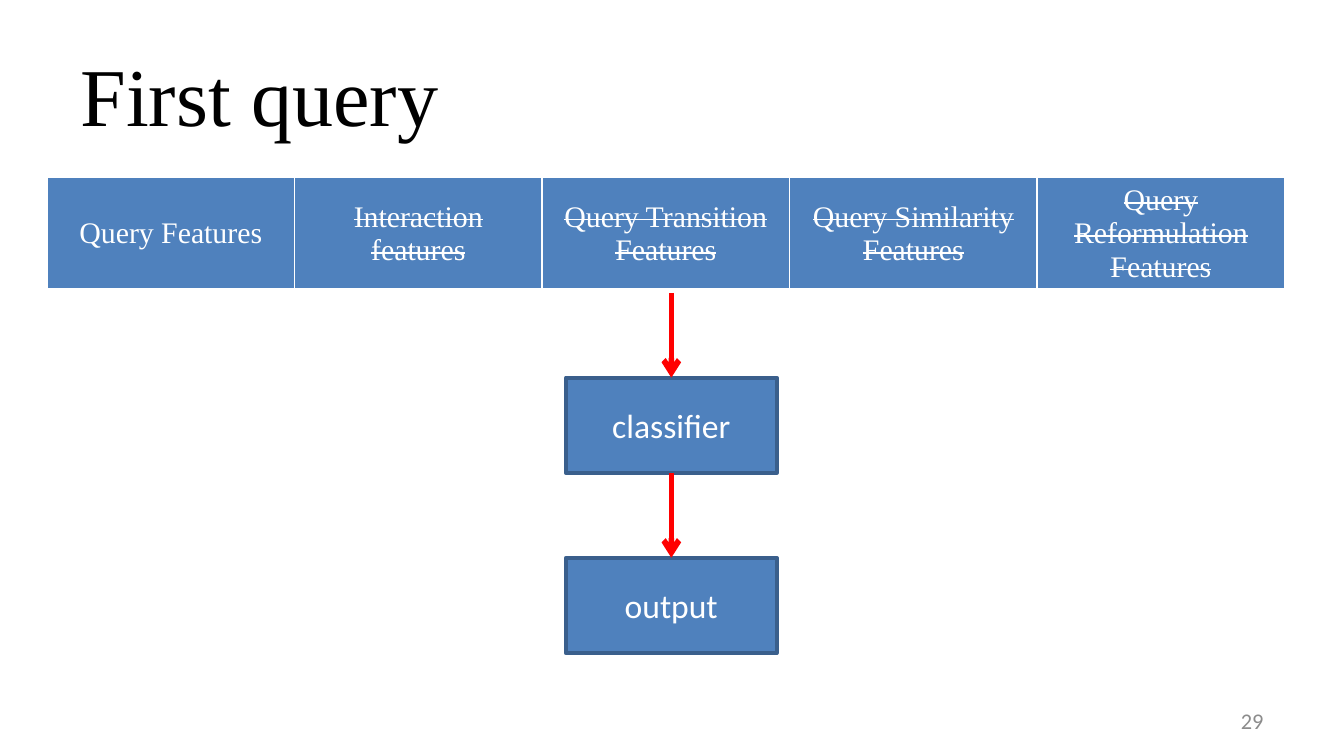
import pptx
import pptx.dml.color
import pptx.enum.shapes
import pptx.enum.text
import pptx.oxml
import pptx.oxml.ns
import pptx.util
from lxml import etree

Inches, Pt = pptx.util.Inches, pptx.util.Pt
PP_ALIGN = pptx.enum.text.PP_ALIGN
MIDDLE = pptx.enum.text.MSO_ANCHOR.MIDDLE
qn = pptx.oxml.ns.qn

COLORS = {"text": "000000", "number": "8C8C8C", "white": "FFFFFF",
          "fill": "4F81BD", "edge": "3A5F8C", "arrow": "FF0000"}
TITLE = {"name": "Times New Roman", "size": Pt(44)}
FEATURE = {"name": "Times New Roman", "size": Pt(16)}
STEP = {"name": "Calibri", "size": Pt(18)}
NUMBER = {"name": "Calibri", "size": Pt(12)}
CELL = {"margin_top": Inches(0.02), "margin_bottom": Inches(0.02),
        "vertical_anchor": MIDDLE}

# Feature name and whether it is struck out
FEATURES = [("Query Features", False), ("Interaction features", True),
            ("Query Transition Features", True),
            ("Query Similarity Features", True),
            ("Query Reformulation Features", True)]
BORDERS = {"lnL": 1, "lnR": 1, "lnT": 1, "lnB": 3}


def rgb(key):
    return pptx.dml.color.RGBColor.from_string(COLORS[key])


def set_all(target, fmt):
    for name, value in fmt.items():
        setattr(target, name, value)


def write(tf, text, fmt, color, align):
    p = tf.paragraphs[0]
    p.alignment = align
    r = p.add_run()
    r.text = text
    set_all(r.font, fmt)
    r.font.color.rgb = rgb(color)
    return r


def add_text(slide, box, text, fmt, color, align=PP_ALIGN.LEFT):
    tf = slide.shapes.add_textbox(*map(Inches, box)).text_frame
    tf.word_wrap = True
    tf.vertical_anchor = MIDDLE
    write(tf, text, fmt, color, align)


def set_borders(cell):
    tcPr = cell._tc.get_or_add_tcPr()
    for i, (tag, width) in enumerate(BORDERS.items()):
        ln = etree.Element(qn(f"a:{tag}"), w=str(Pt(width)))
        fill = etree.SubElement(ln, qn("a:solidFill"))
        etree.SubElement(fill, qn("a:srgbClr"), val=COLORS["white"])
        tcPr.insert(i, ln)


def add_features(slide, box):
    table = slide.shapes.add_table(1, len(FEATURES), *map(Inches, box)).table
    table.rows[0].height = Inches(0.41)  # grows to fit the text
    for cell, (text, struck) in zip(table.rows[0].cells, FEATURES):
        cell.fill.solid()
        cell.fill.fore_color.rgb = rgb("fill")
        set_all(cell, CELL)
        set_borders(cell)
        r = write(cell.text_frame, text, FEATURE, "white", PP_ALIGN.CENTER)
        if struck:
            r._r.get_or_add_rPr().set("strike", "sngStrike")


def add_step(slide, box, text):
    sp = slide.shapes.add_shape(
        pptx.enum.shapes.MSO_SHAPE.RECTANGLE, *map(Inches, box))
    sp.shadow.inherit = False
    sp.fill.solid()
    sp.fill.fore_color.rgb = rgb("fill")
    sp.line.color.rgb = rgb("edge")
    sp.line.width = Pt(2)
    sp.text_frame.vertical_anchor = MIDDLE
    write(sp.text_frame, text, STEP, "white", PP_ALIGN.CENTER)
    return sp


def add_arrow(slide, x, top, bottom):
    cxn = slide.shapes.add_connector(
        pptx.enum.shapes.MSO_CONNECTOR.STRAIGHT,
        *map(Inches, (x, top, x, bottom)))
    cxn.line.color.rgb = rgb("arrow")
    cxn.line.width = Pt(3)
    etree.SubElement(cxn.line._get_or_add_ln(), qn("a:tailEnd"), type="arrow")
    etree.SubElement(cxn._element.spPr, qn("a:effectLst"))
    return cxn


def add_flow(slide, box, steps):
    """Stack the steps in the box, each below an arrow that leads to it."""
    left, top, width, height = box
    pitch = height / len(steps)
    gap = 0.63
    previous = None
    for i, text in enumerate(steps):
        y = top + i * pitch
        sp = add_step(slide, (left, y + gap, width, pitch - gap), text)
        arrow = add_arrow(slide, left + width / 2, y, y + gap)
        if previous:
            arrow.begin_connect(previous, 2)
        arrow.end_connect(sp, 0)
        previous = sp


def main():
    prs = pptx.Presentation()
    prs.slide_width = Inches(10)
    prs.slide_height = Inches(10 * 9 / 16)
    slide = prs.slides.add_slide(prs.slide_layouts[6])
    add_text(slide, (0.5, 0.23, 9, 0.94), "First query", TITLE, "text")
    add_features(slide, (0.35, 1.32, 9.21, 0.9))
    add_flow(slide, (4.21, 2.18, 1.57, 2.68), ["classifier", "output"])
    add_text(slide, (7.17, 5.21, 2.33, 0.3), "29", NUMBER, "number",
             PP_ALIGN.RIGHT)
    prs.save("out.pptx")


if __name__ == "__main__":
    main()
